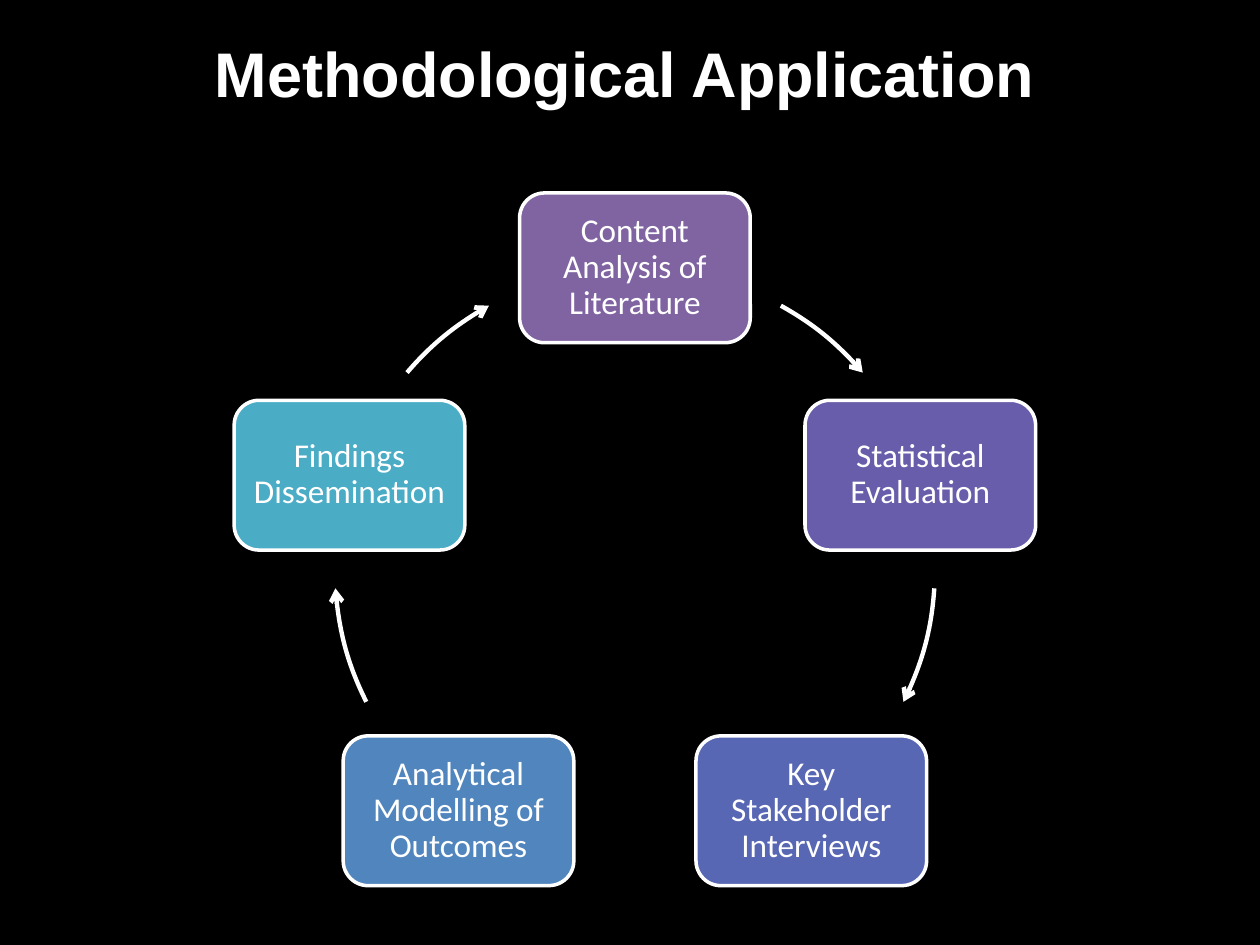
"""Build the methodological application cycle slide."""
from math import cos, radians, sin

from lxml import etree
from pptx import Presentation
from pptx.dml.color import RGBColor
from pptx.enum.shapes import MSO_SHAPE as Shape
from pptx.enum.text import MSO_ANCHOR as Anchor, PP_ALIGN as Align
from pptx.oxml.ns import qn
from pptx.util import Cm, Pt

COLOURS = {
    "background": "000000",
    "white": "FFFFFF",
    "literature": "8064A2",
    "statistics": "685DAB",
    "interviews": "5767B4",
    "modelling": "5185BD",
    "findings": "4BACC6",
}
STEPS = [
    ("Content Analysis of Literature", "literature"),
    ("Statistical Evaluation", "statistics"),
    ("Key Stakeholder Interviews", "interviews"),
    ("Analytical Modelling of Outcomes", "modelling"),
    ("Findings Dissemination", "findings"),
]
ARROW_ANGLES = [(299.1, 319.4), (3.9, 26.5), (153.5, 176.1), (220.6, 240.9)]
CENTRE_X, CENTRE_Y, RADIUS = 12.8, 11.45, 6.05
BOX_WIDTH, BOX_HEIGHT = 4.65, 3.02


def colour(name):
    return RGBColor.from_string(COLOURS[name])


def add_text(paragraph, text, font_name, size, bold=False):
    paragraph.alignment = Align.CENTER
    run = paragraph.add_run()
    run.text = text
    run.font.name = font_name
    run.font.size = Pt(size)
    run.font.bold = bold
    run.font.color.rgb = colour("white")


presentation = Presentation()
presentation.slide_width = Cm(25.4)
presentation.slide_height = Cm(19.05)
slide = presentation.slides.add_slide(presentation.slide_layouts[6])
slide.background.fill.solid()
slide.background.fill.fore_color.rgb = colour("background")

title = slide.shapes.add_textbox(Cm(1.7), Cm(0.58), Cm(21.8), Cm(1.8))
title.text_frame.word_wrap = True
add_text(title.text_frame.paragraphs[0], "Methodological Application", "Arial", 36, True)

for index, (label, fill) in enumerate(STEPS):
    angle = radians(index * 360 / len(STEPS) - 90)
    left = CENTRE_X + RADIUS * cos(angle) - BOX_WIDTH / 2
    top = CENTRE_Y + RADIUS * sin(angle) - BOX_HEIGHT / 2
    box = slide.shapes.add_shape(
        Shape.ROUNDED_RECTANGLE, Cm(left), Cm(top), Cm(BOX_WIDTH), Cm(BOX_HEIGHT)
    )
    box.shadow.inherit = False
    box.fill.solid()
    box.fill.fore_color.rgb = colour(fill)
    box.line.color.rgb = colour("white")
    box.line.width = Pt(2)
    frame = box.text_frame
    frame.word_wrap = True
    frame.vertical_anchor = Anchor.MIDDLE
    frame.margin_left = frame.margin_right = Cm(0.1)
    frame.margin_top = frame.margin_bottom = Cm(0.1)
    frame.paragraphs[0].line_spacing = 0.9
    add_text(frame.paragraphs[0], label, "Calibri", 19)

for start, end in ARROW_ANGLES:
    arrow = slide.shapes.add_shape(
        Shape.ARC, Cm(CENTRE_X - RADIUS), Cm(CENTRE_Y - RADIUS), Cm(2 * RADIUS), Cm(2 * RADIUS)
    )
    arrow.adjustments[0] = start * 0.6
    arrow.adjustments[1] = end * 0.6
    arrow.shadow.inherit = False
    arrow.fill.background()
    arrow.line.color.rgb = colour("white")
    arrow.line.width = Pt(2.5)
    line = arrow.line._get_or_add_ln()
    etree.SubElement(line, qn("a:tailEnd"), type="arrow")

presentation.save("out.pptx")
